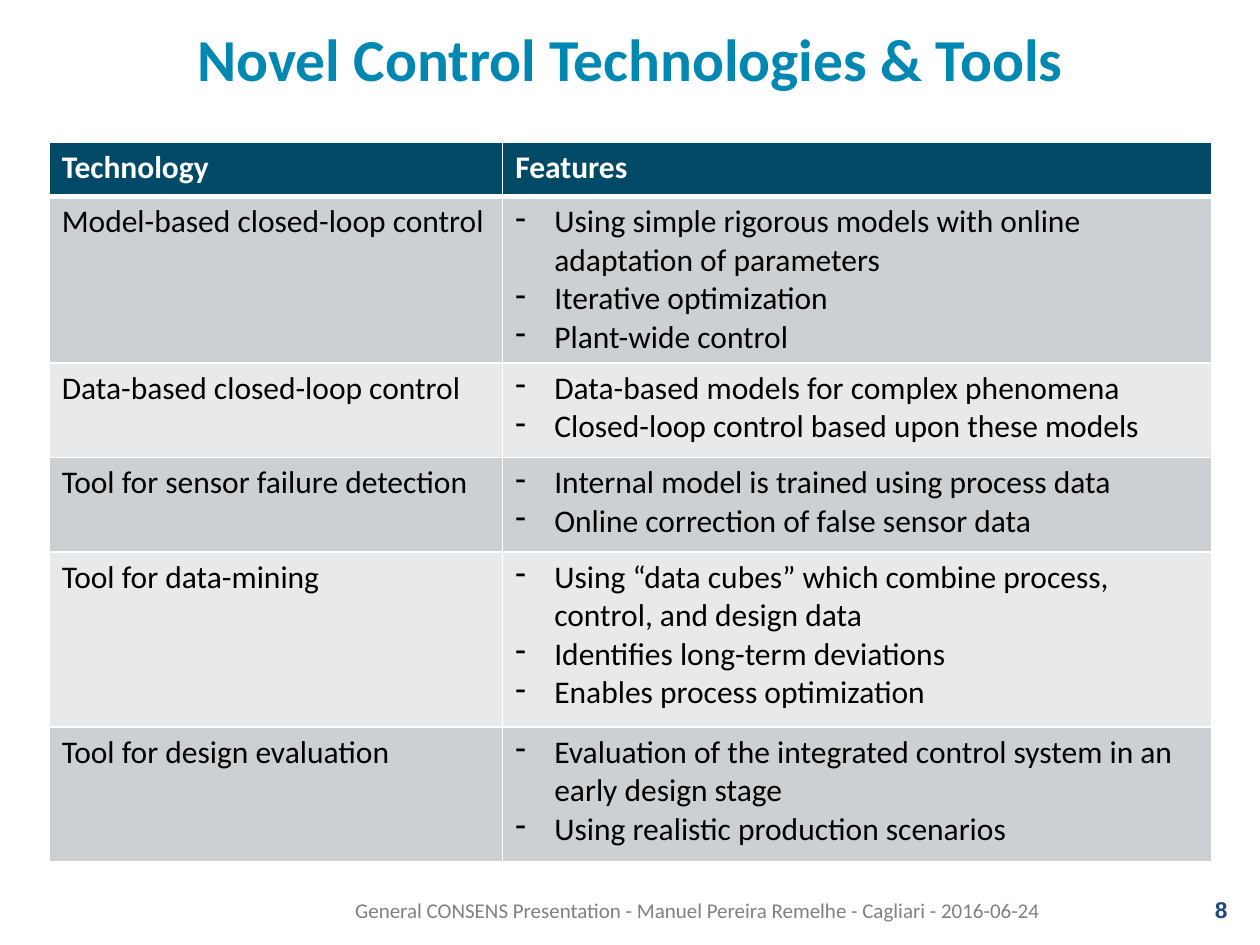
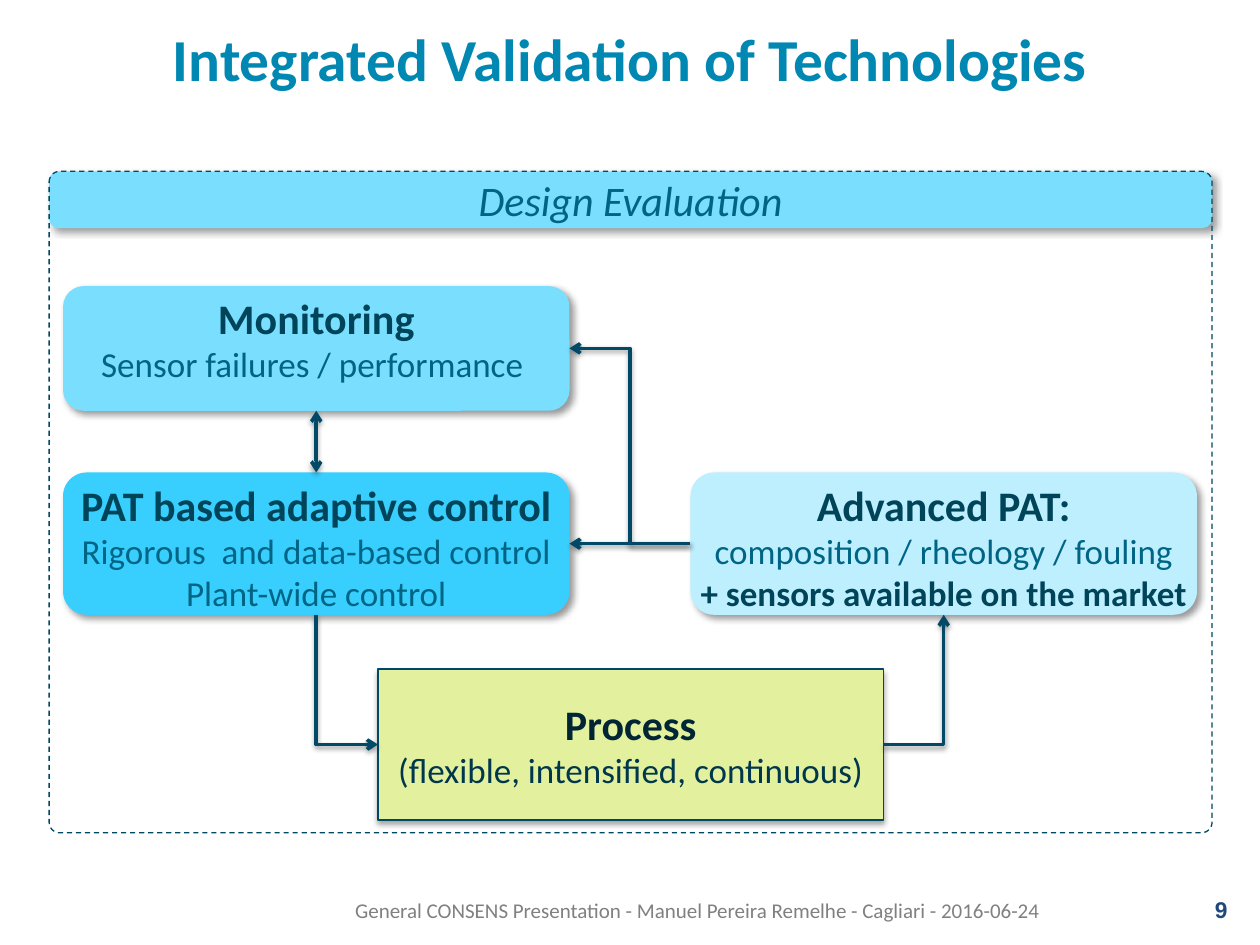
from dataclasses import dataclass

from pptx import Presentation
from pptx.dml.color import RGBColor
from pptx.enum.dml import MSO_LINE
from pptx.enum.shapes import MSO_CONNECTOR, MSO_SHAPE
from pptx.enum.text import MSO_ANCHOR, PP_ALIGN
from pptx.oxml.ns import qn
from pptx.oxml.xmlchemy import OxmlElement
from pptx.util import Inches, Pt

WHITE = RGBColor(0xFF, 0xFF, 0xFF)
BLACK = RGBColor(0x00, 0x00, 0x00)
TITLE_BLUE = RGBColor(0x00, 0x87, 0xB2)
FOOTER_GREY = RGBColor(0x80, 0x80, 0x80)
NUMBER_BLUE = RGBColor(0x1F, 0x49, 0x7D)
HEADER_BLUE = RGBColor(0x00, 0x4A, 0x67)
OUTLINE_BLUE = RGBColor(0x00, 0x48, 0x65)
BAND_COLORS = (RGBColor(0xCC, 0xD0, 0xD3), RGBColor(0xE7, 0xE9, 0xEB))
PALE_BLUE = RGBColor(0xBD, 0xEF, 0xFF)
LIGHT_BLUE = RGBColor(0x7A, 0xDF, 0xFF)
BRIGHT_BLUE = RGBColor(0x38, 0xCF, 0xFF)
PROCESS_GREEN = RGBColor(0xE3, 0xF1, 0x9E)
HEADING_BLUE = RGBColor(0x00, 0x44, 0x59)
DETAIL_BLUE = RGBColor(0x00, 0x65, 0x85)
PROCESS_HEADING = RGBColor(0x00, 0x25, 0x34)
PROCESS_DETAIL = RGBColor(0x00, 0x37, 0x4D)

LEFT, CENTER, RIGHT = PP_ALIGN.LEFT, PP_ALIGN.CENTER, PP_ALIGN.RIGHT
TOP, MIDDLE = MSO_ANCHOR.TOP, MSO_ANCHOR.MIDDLE
RECTANGLE, ROUNDED = MSO_SHAPE.RECTANGLE, MSO_SHAPE.ROUNDED_RECTANGLE
STRAIGHT, ELBOW = MSO_CONNECTOR.STRAIGHT, MSO_CONNECTOR.ELBOW
TOP_SIDE, LEFT_SIDE, BOTTOM_SIDE, RIGHT_SIDE = range(4)

SLIDE_WIDTH, SLIDE_HEIGHT = Inches(10), Inches(7.5)
COLUMN, ROW = SLIDE_WIDTH / 100, SLIDE_HEIGHT / 75


def text_format(size, color, bold=False, italic=False, name="Calibri"):
    """Return the format values of a piece of text."""
    return {"name": name, "size": Pt(size), "bold": bold, "italic": italic, "color": color}


TITLE = text_format(34, TITLE_BLUE, bold=True)
FOOTER = text_format(12, FOOTER_GREY)
NUMBER = text_format(13, NUMBER_BLUE, bold=True, name="Arial")
TABLE_HEADER = text_format(18, WHITE, bold=True)
TABLE_BODY = text_format(18, BLACK)
HEADING = text_format(24, HEADING_BLUE, bold=True)
DETAIL = text_format(20, DETAIL_BLUE)
STRONG_DETAIL = text_format(20, HEADING_BLUE, bold=True)
BANNER = text_format(24, DETAIL_BLUE, italic=True)
PROCESS_TITLE = text_format(24, PROCESS_HEADING, bold=True)
PROCESS_NOTE = text_format(20, PROCESS_DETAIL)

BLOCK_SHADOW = {"alpha": 40, "blur": 4, "distance": 3, "angle": 45}
PROCESS_SHADOW = {"alpha": 35, "blur": 3.1, "distance": 1.8, "angle": 90}
ARROW_SHADOW = {"alpha": 38, "blur": 3.1, "distance": 1.6, "angle": 90}

FOOTER_TEXT = "General CONSENS Presentation - Manuel Pereira Remelhe - Cagliari - 2016-06-24"
TECHNOLOGIES = (
    ("Model-based closed-loop control", (
        "Using simple rigorous models with online adaptation of parameters",
        "Iterative optimization",
        "Plant-wide control")),
    ("Data-based closed-loop control", (
        "Data-based models for complex phenomena",
        "Closed-loop control based upon these models")),
    ("Tool for sensor failure detection", (
        "Internal model is trained using process data",
        "Online correction of false sensor data")),
    ("Tool for data-mining", (
        "Using “data cubes” which combine process, control, and design data",
        "Identifies long-term deviations",
        "Enables process optimization")),
    ("Tool for design evaluation", (
        "Evaluation of the integrated control system in an early design stage",
        "Using realistic production scenarios")),
)


@dataclass
class Box:
    """A region measured in grid columns and rows."""
    left: float
    top: float
    width: float
    height: float

    def inner(self, column, row, width, height):
        """Return a box placed relative to this one."""
        return Box(self.left + column, self.top + row, width, height)

    def lengths(self):
        """Return left, top, width and height as slide lengths."""
        return (int(self.left * COLUMN), int(self.top * ROW),
                int(self.width * COLUMN), int(self.height * ROW))


SLIDE_BOX = Box(0, 0, 100, 75)


def add_element(parent, tag, **attributes):
    """Append an XML element with attributes and return it."""
    element = OxmlElement(tag)
    for name, value in attributes.items():
        element.set(name, str(value))
    parent.append(element)
    return element


def format_font(font, values):
    """Apply format values to a font."""
    for name, value in values.items():
        if name == "color":
            font.color.rgb = value
        else:
            setattr(font, name, value)


def write_lines(frame, lines, alignment=LEFT, bullet=None, line_spacing=None):
    """Fill a text frame with one paragraph per text and format pair."""
    for index, (text, values) in enumerate(lines):
        paragraph = frame.paragraphs[0] if index == 0 else frame.add_paragraph()
        paragraph.alignment = alignment
        if line_spacing:
            paragraph.line_spacing = line_spacing
        if bullet:
            properties = paragraph._p.get_or_add_pPr()
            properties.set("marL", str(Inches(0.31)))
            properties.set("indent", str(-Inches(0.31)))
            add_element(properties, "a:buChar", char=bullet)
        run = paragraph.add_run()
        run.text = text
        format_font(run.font, values)


def add_text(slide, box, text, values, alignment=LEFT, line_spacing=None):
    """Add a wrapped, vertically centred text box."""
    frame = slide.shapes.add_textbox(*box.lengths()).text_frame
    frame.word_wrap = True
    frame.vertical_anchor = MIDDLE
    write_lines(frame, [(text, values)], alignment, line_spacing=line_spacing)


def add_shadow(shape, alpha, blur, distance, angle):
    """Give a shape or connector an outer shadow."""
    properties = shape._element.spPr
    effects = properties.find(qn("a:effectLst"))
    if effects is None:
        effects = add_element(properties, "a:effectLst")
    shadow = add_element(effects, "a:outerShdw", blurRad=Pt(blur), dist=Pt(distance),
                         dir=angle * 60000, algn="tl", rotWithShape=0)
    color = add_element(shadow, "a:srgbClr", val=BLACK)
    add_element(color, "a:alpha", val=alpha * 1000)


def add_block(slide, box, lines, fill, kind=ROUNDED, shadow=BLOCK_SHADOW):
    """Add a filled block with centred lines of text."""
    shape = slide.shapes.add_shape(kind, *box.lengths())
    shape.shadow.inherit = False
    shape.fill.solid()
    shape.fill.fore_color.rgb = fill
    frame = shape.text_frame
    if kind == ROUNDED:
        shape.line.fill.background()
        frame.word_wrap = False
        frame.vertical_anchor = TOP
        for margin in ("margin_left", "margin_top", "margin_right", "margin_bottom"):
            setattr(frame, margin, 0)
    else:
        outline(shape)
        frame.word_wrap = True
        frame.vertical_anchor = MIDDLE
    add_shadow(shape, **shadow)
    write_lines(frame, lines, CENTER)
    return shape


def outline(shape):
    """Draw the thin dark outline."""
    shape.line.color.rgb = OUTLINE_BLUE
    shape.line.width = Pt(0.75)


def side_middle(shape, side):
    """Return the middle point of a side of a shape."""
    middle_x, middle_y = shape.left + shape.width // 2, shape.top + shape.height // 2
    return {TOP_SIDE: (middle_x, shape.top),
            LEFT_SIDE: (shape.left, middle_y),
            BOTTOM_SIDE: (middle_x, shape.top + shape.height),
            RIGHT_SIDE: (shape.left + shape.width, middle_y)}[side]


def add_arrow(slide, start, end, kind=STRAIGHT, heads=("tailEnd",), corner=False):
    """Connect two (shape, side) pairs with an arrow, optionally with one corner."""
    arrow = slide.shapes.add_connector(kind, *side_middle(*start), *side_middle(*end))
    if kind == STRAIGHT:
        arrow.begin_connect(*start)
        arrow.end_connect(*end)
    if corner:
        arrow._element.spPr.find(qn("a:prstGeom")).set("prst", "bentConnector2")
    arrow.line.color.rgb = HEADER_BLUE
    arrow.line.width = Pt(2)
    for head in heads:
        add_element(arrow.line._get_or_add_ln(), f"a:{head}", type="arrow")
    add_shadow(arrow, **ARROW_SHADOW)


def add_base(presentation, box, title, number):
    """Add a blank slide with title, footer and page number."""
    slide = presentation.slides.add_slide(presentation.slide_layouts[6])
    add_text(slide, box.inner(5, 1.5, 90, 7.2), title, TITLE, CENTER, 0.8)
    add_text(slide, box.inner(27.2, 70.2, 60.1, 4), FOOTER_TEXT, FOOTER)
    add_text(slide, box.inner(89.6, 70.2, 8.8, 4), str(number), NUMBER, RIGHT)
    return slide


def format_cell(cell, fill, thick_side=None):
    """Fill a cell and give it white borders."""
    cell.fill.solid()
    cell.fill.fore_color.rgb = fill
    properties = cell._tc.get_or_add_tcPr()
    for index, side in enumerate(("lnL", "lnR", "lnT", "lnB")):
        border = OxmlElement(f"a:{side}")
        border.set("w", str(Pt(3 if side == thick_side else 1)))
        add_element(add_element(border, "a:solidFill"), "a:srgbClr", val=WHITE)
        properties.insert(index, border)


def add_technology_table(slide, box):
    """Add the table of technologies and their features."""
    row_heights = (4.3, 13.2, 7.5, 7.5, 13.9, 10.7)
    table = slide.shapes.add_table(len(row_heights), 2, *box.lengths()).table
    table.horz_banding = False
    for column, share in zip(table.columns, (0.39, 0.61)):
        column.width = int(box.width * share * COLUMN)
    for row, height in zip(table.rows, row_heights):
        row.height = int(height * ROW)
    for column, heading in enumerate(("Technology", "Features")):
        cell = table.cell(0, column)
        format_cell(cell, HEADER_BLUE, "lnB")
        write_lines(cell.text_frame, [(heading, TABLE_HEADER)])
    for index, (technology, features) in enumerate(TECHNOLOGIES):
        name_cell, feature_cell = table.rows[index + 1].cells
        for cell in (name_cell, feature_cell):
            format_cell(cell, BAND_COLORS[index % 2], "lnT" if index == 0 else None)
        write_lines(name_cell.text_frame, [(technology, TABLE_BODY)])
        write_lines(feature_cell.text_frame,
                    [(feature, TABLE_BODY) for feature in features], bullet="-")


def add_validation_diagram(slide, box):
    """Add the control loop inside the design evaluation frame."""
    left_column, right_column, block_width = 1.1, 50.9, 40.2
    process = add_block(slide, box.inner(26.1, 39.5, 40.1, 12), [
        ("Process", PROCESS_TITLE),
        ("(flexible, intensified, continuous)", PROCESS_NOTE),
    ], PROCESS_GREEN, RECTANGLE, PROCESS_SHADOW)
    sensors = add_block(slide, box.inner(right_column, 23.9, block_width, 11.3), [
        ("Advanced PAT:", HEADING),
        ("composition / rheology / fouling", DETAIL),
        ("+ sensors available on the market", STRONG_DETAIL),
    ], PALE_BLUE)
    monitoring = add_block(slide, box.inner(left_column, 9.1, block_width, 9.9), [
        ("Monitoring", HEADING),
        ("Sensor failures / performance ", DETAIL),
    ], LIGHT_BLUE)
    control = add_block(slide, box.inner(left_column, 23.9, block_width, 11.3), [
        ("PAT based adaptive control", HEADING),
        ("Rigorous  and data-based control", DETAIL),
        ("Plant-wide control", DETAIL),
    ], BRIGHT_BLUE)
    add_block(slide, box.inner(0, 0, box.width, 4.5),
              [("Design Evaluation", BANNER)], LIGHT_BLUE)

    frame = slide.shapes.add_shape(ROUNDED, *box.lengths())
    frame.shadow.inherit = False
    frame.adjustments[0] = 0.016
    frame.fill.background()
    outline(frame)
    frame.line.dash_style = MSO_LINE.DASH

    add_arrow(slide, (process, LEFT_SIDE), (control, BOTTOM_SIDE), ELBOW, ("headEnd",), True)
    add_arrow(slide, (monitoring, BOTTOM_SIDE), (control, TOP_SIDE),
              heads=("headEnd", "tailEnd"))
    add_arrow(slide, (sensors, LEFT_SIDE), (monitoring, RIGHT_SIDE), ELBOW)
    add_arrow(slide, (process, RIGHT_SIDE), (sensors, BOTTOM_SIDE), ELBOW, corner=True)
    add_arrow(slide, (sensors, LEFT_SIDE), (control, RIGHT_SIDE))


def main():
    """Build and save the presentation."""
    presentation = Presentation()
    presentation.slide_width, presentation.slide_height = SLIDE_WIDTH, SLIDE_HEIGHT
    tools = add_base(presentation, SLIDE_BOX, "Novel Control Technologies & Tools", 8)
    add_technology_table(tools, SLIDE_BOX.inner(3.9, 11.3, 92.3, 57.1))
    validation = add_base(presentation, SLIDE_BOX, "Integrated Validation of Technologies", 9)
    add_validation_diagram(validation, SLIDE_BOX.inner(3.9, 13.6, 92.3, 52.5))
    presentation.save("out.pptx")


if __name__ == "__main__":
    main()
